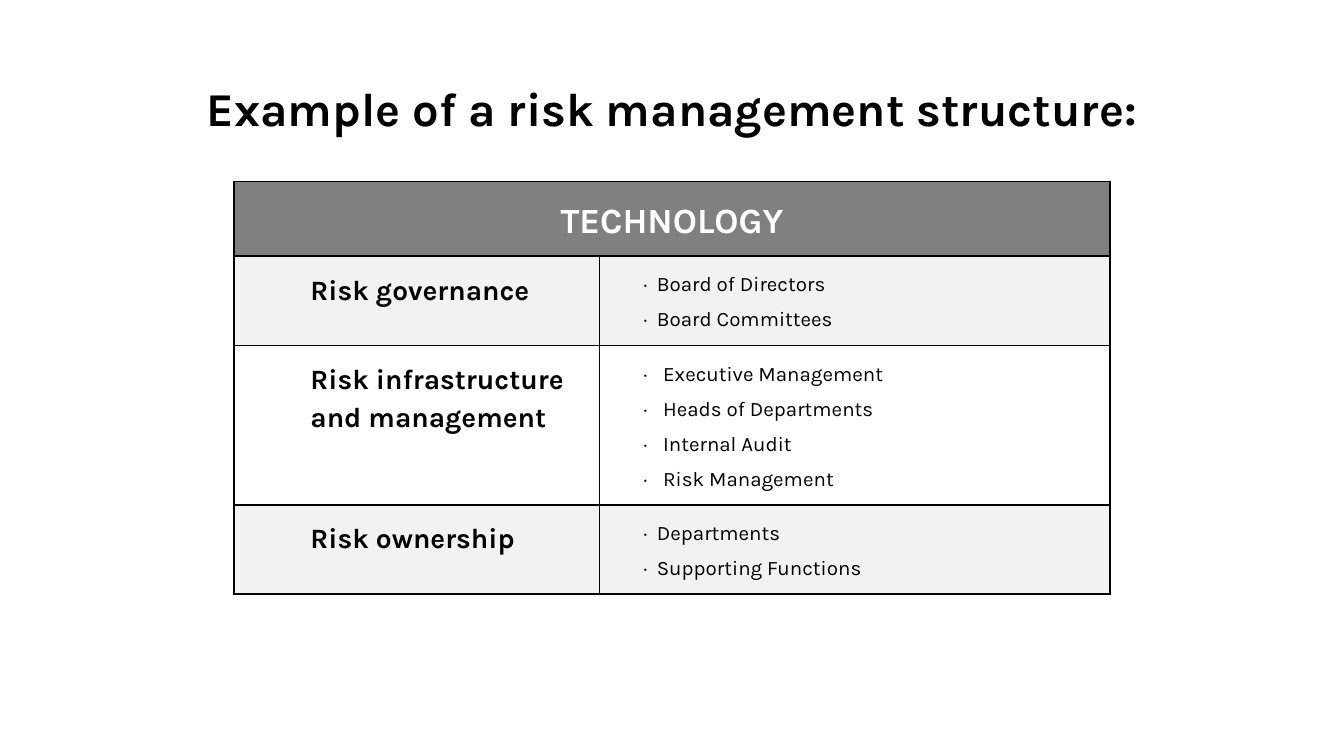
from dataclasses import dataclass

from lxml import etree
from pptx import Presentation
from pptx import util as u
from pptx.dml.color import RGBColor
from pptx.enum import text
from pptx.oxml import ns


@dataclass(frozen=True)
class Theme:
    font: str = "Karla"
    ink: str = "000000"
    header_ink: str = "FFFFFF"
    header_fill: str = "808080"
    band_fill: str = "F2F2F2"
    title_size: float = 25.2
    header_size: float = 19
    level_size: float = 15
    body_size: float = 11
    gap_size: float = 7
    line_spacing: float = 1.15
    border_width: float = 1


THEME = Theme()
COLUMN_WIDTHS = (2.72, 3.8)
HEADER_HEIGHT = 0.33
# Level, its members, row height, fill, extra points between dot and wording
LEVELS = (
    ("Risk governance", ("Board of Directors", "Board Committees"),
     0.59, THEME.band_fill, 3.4),
    ("Risk infrastructure and management",
     ("Executive Management", "Heads of Departments", "Internal Audit", "Risk Management"),
     1.08, None, 6.8),
    ("Risk ownership", ("Departments", "Supporting Functions"),
     0.57, THEME.band_fill, 3.4),
)


def write(paragraph, wording, *, size, bold=False, color=THEME.ink, tracking=0):
    """Append a run; tracking is extra letter spacing in points."""
    run = paragraph.add_run()
    run.text = wording
    run.font.name, run.font.size, run.font.bold = THEME.font, u.Pt(size), bold
    run.font.color.rgb = RGBColor.from_string(color)
    if tracking:
        run.font._element.set("spc", str(round(tracking * 100)))


def lay_out(paragraph, *, align=text.PP_ALIGN.LEFT, spacing=THEME.line_spacing,
            before=0, after=0, indent=0.0):
    paragraph.alignment = align
    paragraph.line_spacing = spacing
    paragraph.space_before, paragraph.space_after = u.Pt(before), u.Pt(after)
    properties = paragraph._p.get_or_add_pPr()
    properties.set("marL", str(u.Inches(indent)))
    properties.set("indent", "0")


def add_borders(cell):
    properties = cell._tc.get_or_add_tcPr()
    for position, side in enumerate(("lnL", "lnR", "lnT", "lnB")):
        line = etree.Element(ns.qn(f"a:{side}"), w=str(u.Pt(THEME.border_width)))
        solid = etree.SubElement(line, ns.qn("a:solidFill"))
        etree.SubElement(solid, ns.qn("a:srgbClr"), val=THEME.ink)
        properties.insert(position, line)


def style_cell(cell, fill):
    cell.margin_left = cell.margin_right = u.Inches(0.07)
    cell.margin_top = cell.margin_bottom = u.Inches(0.1)
    cell.vertical_anchor = text.MSO_ANCHOR.TOP
    if fill:
        cell.fill.solid()
        cell.fill.fore_color.rgb = RGBColor.from_string(fill)
    else:
        cell.fill.background()
    add_borders(cell)


def set_title(slide, wording):
    title = slide.shapes.title
    title.left, title.top = u.Inches(0.34), u.Inches(0.49)
    title.width, title.height = u.Inches(9.32), u.Inches(0.63)
    frame = title.text_frame
    frame.margin_left = frame.margin_right = u.Inches(0.1)
    frame.margin_top = frame.margin_bottom = u.Inches(0.1)
    frame.vertical_anchor = text.MSO_ANCHOR.TOP
    frame.word_wrap = True
    lay_out(frame.paragraphs[0], align=text.PP_ALIGN.CENTER, spacing=1.0)
    write(frame.paragraphs[0], wording, size=THEME.title_size, bold=True)


def write_members(cell, members, dot_gap):
    frame = cell.text_frame
    for index, member in enumerate(members):
        paragraph = frame.add_paragraph() if index else frame.paragraphs[0]
        is_last = index == len(members) - 1
        lay_out(paragraph, before=4, after=4 if is_last else 0, indent=0.26)
        write(paragraph, "·", size=THEME.body_size)
        write(paragraph, " ", size=THEME.gap_size, tracking=dot_gap)
        write(paragraph, member, size=THEME.body_size)


def add_structure_table(slide):
    heights = [HEADER_HEIGHT] + [level[2] for level in LEVELS]
    table = slide.shapes.add_table(
        len(heights), len(COLUMN_WIDTHS), u.Inches(1.74), u.Inches(1.35),
        u.Inches(sum(COLUMN_WIDTHS)), u.Inches(sum(heights))).table
    table.first_row = table.horz_banding = False
    for column, width in zip(table.columns, COLUMN_WIDTHS):
        column.width = u.Inches(width)
    for row, height in zip(table.rows, heights):
        row.height = u.Inches(height)

    header = table.cell(0, 0)
    header.merge(table.cell(0, 1))
    for cell in table.rows[0].cells:
        style_cell(cell, THEME.header_fill)
    heading = header.text_frame.paragraphs[0]
    lay_out(heading, align=text.PP_ALIGN.CENTER)
    write(heading, "TECHNOLOGY", size=THEME.header_size, bold=True, color=THEME.header_ink)

    for row, (level, members, _, fill, dot_gap) in enumerate(LEVELS, start=1):
        level_cell, members_cell = table.cell(row, 0), table.cell(row, 1)
        style_cell(level_cell, fill)
        style_cell(members_cell, fill)
        level_name = level_cell.text_frame.paragraphs[0]
        lay_out(level_name, before=12, after=12, indent=0.5)
        write(level_name, level, size=THEME.level_size, bold=True)
        write_members(members_cell, members, dot_gap)


def main():
    deck = Presentation()
    deck.slide_width = u.Inches(10)
    deck.slide_height = deck.slide_width * 9 // 16
    slide = deck.slides.add_slide(deck.slide_layouts.get_by_name("Title Only"))
    set_title(slide, "Example of a risk management structure:")
    add_structure_table(slide)
    deck.save("out.pptx")


if __name__ == "__main__":
    main()
